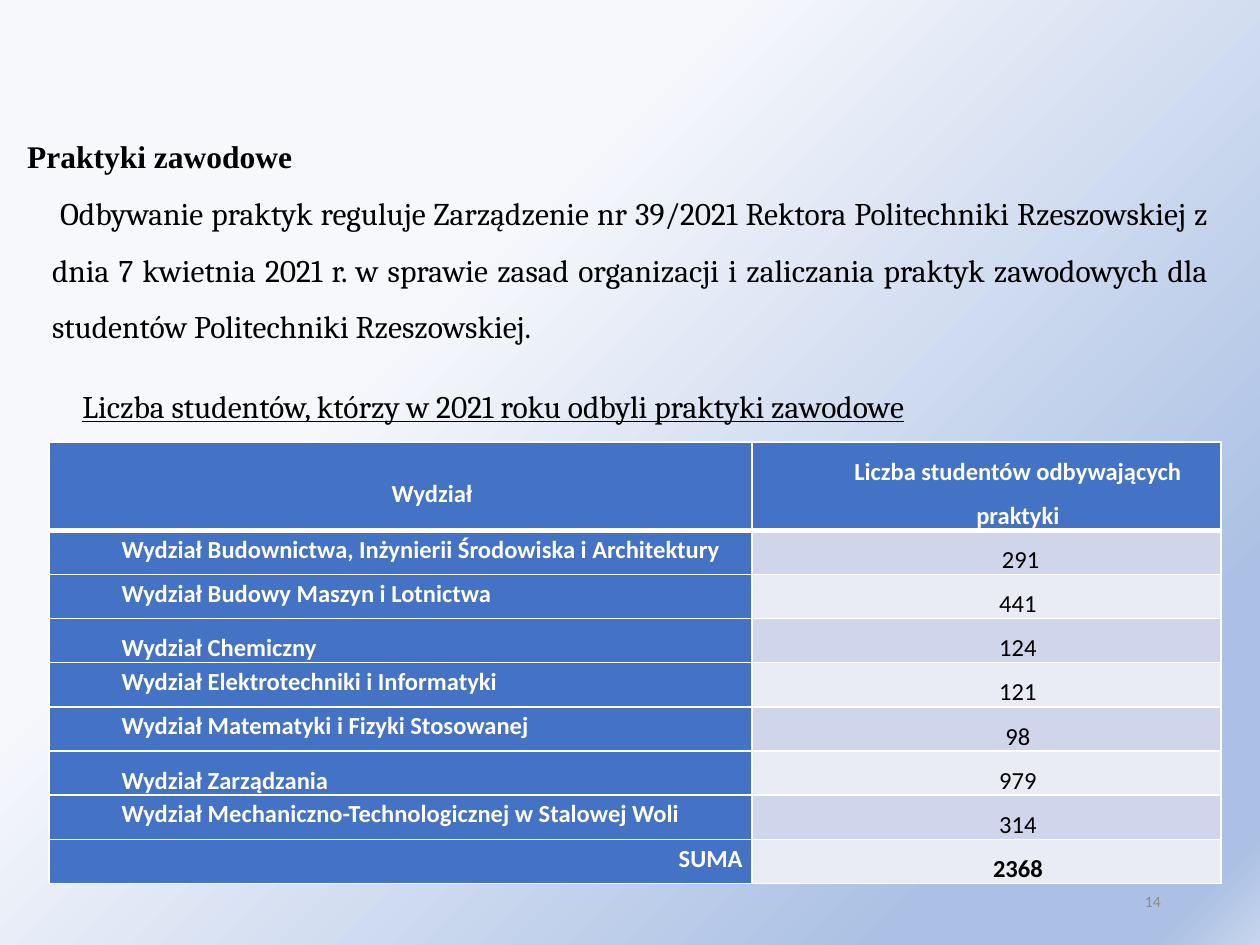
from lxml import etree
from pptx import Presentation
from pptx.dml.color import RGBColor
from pptx.enum.text import MSO_ANCHOR as Anchor, PP_ALIGN as Align
from pptx.oxml.ns import qn
from pptx.util import Cm, Pt

COLOURS = {
    "text": "000000", "header": "4472C4", "inverse": "FFFFFF", "number": "8C8C8C",
    "odd": "CFD5EA", "even": "E9EBF5",
}
GRADIENT = ((33, "F6F8FC"), (83, "ABC0E4"), (95, "ABC0E4"), (100, "C7D5ED"))

HEADINGS = ("Wydział", "Liczba studentów odbywających praktyki")
FACULTIES = (
    ("Wydział Budownictwa, Inżynierii Środowiska i Architektury", " 291"),
    ("Wydział Budowy Maszyn i Lotnictwa", "441"),
    ("Wydział Chemiczny", "124"),
    ("Wydział Elektrotechniki i Informatyki", "121"),
    ("Wydział Matematyki i Fizyki Stosowanej", "98"),
    ("Wydział Zarządzania", "979"),
    ("Wydział Mechaniczno-Technologicznej w Stalowej Woli", "314"),
    ("SUMA", "2368"),
)
LOOSE_ROWS = {"Wydział Chemiczny", "Wydział Zarządzania"}
TOTAL = "SUMA"


def set_attributes(target, values):
    for name, value in values.items():
        setattr(target, name, value)


def write(para, text, colour="text", layout=None, left=0, first=0, **font):
    """Add one formatted run; left and first are paragraph indents in cm."""
    set_attributes(para, layout or {})
    properties = para._p.get_or_add_pPr()
    properties.set("marL", str(Cm(left)))
    properties.set("indent", str(Cm(first)))
    span = para.add_run()
    span.text = text
    set_attributes(span.font, font)
    span.font.color.rgb = RGBColor.from_string(COLOURS[colour])


def add_text_frame(page, box, anchor=Anchor.TOP):
    frame = page.shapes.add_textbox(*map(Cm, box)).text_frame
    set_attributes(frame, {"word_wrap": True, "vertical_anchor": anchor})
    return frame


def paint_background(page):
    fill = page.background.fill
    fill.gradient()
    fill.gradient_angle = 315
    stops = page.background._cSld.find(".//" + qn("a:gsLst"))
    for stop in list(stops):
        stops.remove(stop)
    for position, colour in GRADIENT:
        stop = etree.SubElement(stops, qn("a:gs"), pos=str(position * 1000))
        etree.SubElement(stop, qn("a:srgbClr"), val=colour)


def add_introduction(page, box):
    frame = add_text_frame(page, box)
    layout = {"alignment": Align.JUSTIFY, "line_spacing": 1.5}
    write(frame.paragraphs[0], "Praktyki zawodowe", layout=layout,
          name="Times New Roman", size=Pt(18), bold=True)
    write(frame.add_paragraph(),
          " Odbywanie praktyk reguluje Zarządzenie nr 39/2021 Rektora Politechniki "
          "Rzeszowskiej z dnia 7 kwietnia 2021 r. w sprawie zasad organizacji i "
          "zaliczania praktyk zawodowych dla studentów Politechniki Rzeszowskiej.",
          layout=layout, left=0.5, name="Cambria", size=Pt(18))


def add_table_title(page, box):
    layout = {"alignment": Align.CENTER, "line_spacing": 1.07, "space_after": Pt(8)}
    write(add_text_frame(page, box).paragraphs[0],
          "Liczba studentów, którzy w 2021 roku odbyli praktyki zawodowe",
          layout=layout, left=1.25, first=-1.25,
          name="Cambria", size=Pt(18), underline=True)


def add_borders(cell, bottom):
    properties = cell._tc.get_or_add_tcPr()
    for side, width in (("L", 1), ("R", 1), ("T", 1), ("B", bottom)):
        line = etree.SubElement(properties, qn(f"a:ln{side}"), w=str(Pt(width)))
        fill = etree.SubElement(line, qn("a:solidFill"))
        etree.SubElement(fill, qn("a:srgbClr"), val=COLOURS["inverse"])


def fill_cell(cell, text, fill, colour, layout, bold=True, bottom=1):
    set_attributes(cell, {"margin_left": Cm(0.19), "margin_right": Cm(0.19),
                          "margin_top": 0, "margin_bottom": 0})
    add_borders(cell, bottom)
    cell.fill.solid()
    cell.fill.fore_color.rgb = RGBColor.from_string(COLOURS[fill])
    write(cell.text_frame.paragraphs[0], text, colour, layout, left=1.27,
          name="Calibri", size=Pt(14), bold=bold)


def faculty_layout(name):
    if name in LOOSE_ROWS:
        return {"alignment": Align.JUSTIFY, "line_spacing": 1.5}
    return {"alignment": Align.RIGHT if name == TOTAL else Align.LEFT,
            "line_spacing": 1.15}


def add_faculty_table(page, box):
    table = page.shapes.add_table(len(FACULTIES) + 1, 2, *map(Cm, box)).table
    for column, share in zip(table.columns, (0.6, 0.4)):
        column.width = Cm(round(box[2] * share, 2))
    unit = box[3] / (len(FACULTIES) + 2)
    for index, row in enumerate(table.rows):
        row.height = Cm(unit if index else 2 * unit)

    centred = {"alignment": Align.CENTER, "line_spacing": 1.5}
    spaced = {**centred, "space_after": Pt(8)}
    for column, (text, layout) in enumerate(zip(HEADINGS, (centred, spaced))):
        fill_cell(table.cell(0, column), text, "header", "inverse", layout, bottom=3)
    table.cell(0, 0).vertical_anchor = Anchor.MIDDLE

    for index, (name, count) in enumerate(FACULTIES, 1):
        fill_cell(table.cell(index, 0), name, "header", "inverse", faculty_layout(name))
        fill_cell(table.cell(index, 1), count, "odd" if index % 2 else "even", "text",
                  centred if index == 1 else spaced, bold=name == TOTAL)


def add_page_number(page, box):
    write(add_text_frame(page, box, Anchor.MIDDLE).paragraphs[0], "14", "number",
          {"alignment": Align.RIGHT}, name="Calibri", size=Pt(9))


def main():
    deck = Presentation()
    set_attributes(deck, {"slide_width": Cm(25.4), "slide_height": Cm(19.05)})
    page = deck.slides.add_slide(deck.slide_layouts[6])
    paint_background(page)
    add_page_number(page, (17.93, 17.65, 5.72, 1.02))
    add_introduction(page, (0.3, 2.26, 24.31, 5.89))
    add_faculty_table(page, (0.99, 8.91, 23.62, 8.9))
    add_table_title(page, (-0.2, 7.62, 20.29, 1.04))
    deck.save("out.pptx")


if __name__ == "__main__":
    main()
